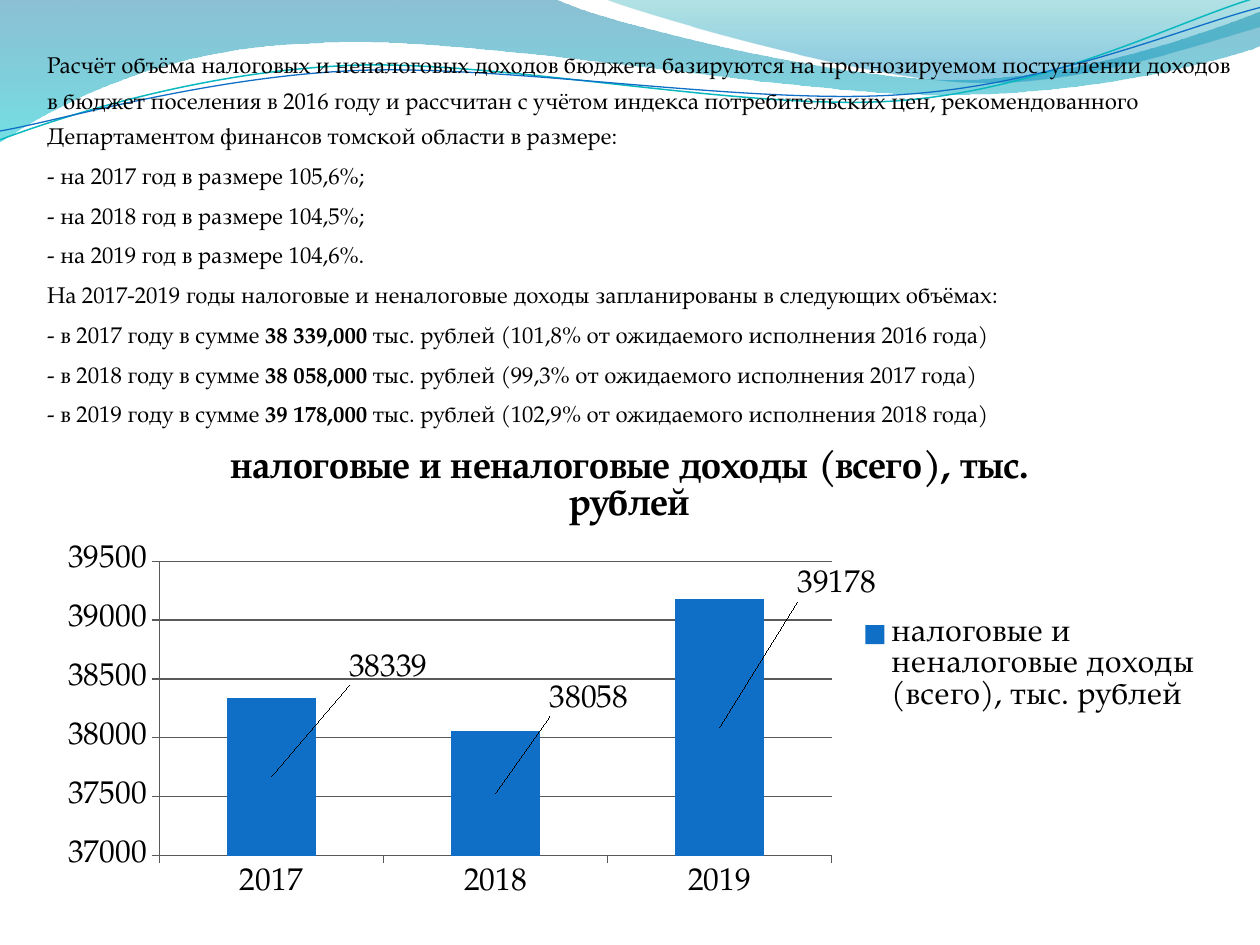
from lxml import etree
from pptx import Presentation
from pptx import util as u
from pptx.chart.data import CategoryChartData
from pptx.dml.color import RGBColor
from pptx.enum import chart as ch
from pptx.enum import text as t
from pptx.oxml import parse_xml
from pptx.oxml.ns import nsdecls, qn

BLACK = RGBColor(0x00, 0x00, 0x00)
GREY = RGBColor(0x59, 0x59, 0x59)
BLUE = RGBColor(0x0F, 0x6F, 0xC6)
TEAL = RGBColor(0x0A, 0xB8, 0xBF)
DEEP = RGBColor(0x00, 0x74, 0xA1)
AQUA = RGBColor(0x00, 0xC6, 0xCF)
SEA = RGBColor(0x00, 0xA1, 0xA9)
SKY = RGBColor(0x00, 0x8B, 0xBF)
FONT = "TeX Gyre Pagella"
NAME = "налоговые и неналоговые доходы (всего), тыс. рублей"
C15 = "http://schemas.microsoft.com/office/drawing/2012/chart"

LEFT = [(0, 0), (440, -1), (476, 17, 664, 63, 758, 63),
        (853, 63, 958, 26, 1000, 9), (1001, 36),
        (983, 44, 870, 76, 746, 75), (622, 75, 382, 28, 257, 34),
        (129, 36, 46, 83, -1, 113)]
RIGHT = [(479, -1), (509, 11, 682, 62, 769, 65),
         (856, 69, 961, 32, 1000, 21), (1000, 0)]
HIGH = [(0, 111), (48, 93, 158, 57, 277, 52),
        (395, 47, 593, 89, 713, 80), (833, 71, 938, 15, 998, -2)]
LOW = [(0, 104), (47, 96, 164, 61, 283, 56),
       (403, 51, 597, 84, 717, 75), (836, 67, 941, 21, 1000, 6)]

LINES = [
    ["Расчёт объёма налоговых и неналоговых доходов бюджета базируются на "
     "прогнозируемом поступлении доходов в бюджет поселения в 2016 году и "
     "рассчитан с учётом индекса потребительских цен, рекомендованного "
     "Департаментом финансов томской области в размере:"],
    ["- на 2017 год в размере 105,6%;"],
    ["- на 2018 год в размере 104,5%;"],
    ["- на 2019 год в размере 104,6%."],
    ["На 2017-2019 годы налоговые и неналоговые доходы запланированы "
     "в следующих объёмах:"],
    ["- в 2017 году в сумме ", "38 339,000 ",
     "тыс. рублей (101,8% от ожидаемого исполнения 2016 года)"],
    ["- в 2018 году в сумме ", "38 058,000 ",
     "тыс. рублей (99,3% от ожидаемого исполнения 2017 года)"],
    ["- в 2019 году в сумме ", "39 178,000 ",
     "тыс. рублей (102,9% от ожидаемого исполнения 2018 года)"],
]


def curve(slide, box, path, close):
    x, y, w, h = box
    pts = [(int(x + a * w / 1000), int(y + b * w / 1000))
           for seg in path for a, b in zip(seg[::2], seg[1::2])]
    pen = slide.shapes.build_freeform(*pts[0])
    pen.add_line_segments(pts[1:], close=close)
    shape = pen.convert_to_shape()
    shape.shadow.inherit = False
    shape.fill.background()
    steps = iter(list(shape.element.iter(qn("a:lnTo"))))
    for seg in path[1:]:
        first = next(steps)
        if len(seg) == 6:
            bend = etree.Element(qn("a:cubicBezTo"))
            first.addprevious(bend)
            for step in (first, next(steps), next(steps)):
                bend.append(step[0])
                step.getparent().remove(step)
    return shape


def fade(shape, stops):
    marks = "".join(
        f'<a:gs pos="{pos * 1000}"><a:srgbClr val="{color}">'
        f'<a:alpha val="{alpha * 1000}"/></a:srgbClr></a:gs>'
        for pos, color, alpha in stops)
    grad = parse_xml(f'<a:gradFill {nsdecls("a")} rotWithShape="1"><a:gsLst>{marks}'
                     '</a:gsLst><a:lin ang="5400000" scaled="1"/></a:gradFill>')
    old = shape.element.spPr.find(qn("a:noFill"))
    old.getparent().replace(old, grad)


def waves(slide, box):
    for path, stops in ((LEFT, [(0, DEEP, 45), (100, AQUA, 55)]),
                        (RIGHT, [(0, SEA, 30), (80, SKY, 45)])):
        shape = curve(slide, box, path, True)
        shape.line.fill.background()
        fade(shape, stops)
    for path, color, width in ((HIGH, TEAL, 0.85), (LOW, BLUE, 0.75)):
        line = curve(slide, box, path, False).line
        line.color.rgb = color
        line.width = u.Pt(width)


def style(font, size, bold=False):
    font.name, font.size, font.bold = FONT, u.Pt(size), bold
    font.color.rgb = BLACK


def notes(slide, body, box):
    slide.shapes.element.append(body.element)
    body.left, body.top, body.width, body.height = box
    frame = body.text_frame
    frame.word_wrap = True
    frame.auto_size = t.MSO_AUTO_SIZE.NONE
    frame.vertical_anchor = t.MSO_ANCHOR.TOP
    frame.margin_left = frame.margin_right = u.Cm(0.05)
    frame.margin_top = frame.margin_bottom = u.Cm(0.12)
    for i, parts in enumerate(LINES):
        para = frame.add_paragraph() if i else frame.paragraphs[0]
        para.line_spacing = 1.3
        para.space_before = u.Pt(2.4)
        props = para._p.get_or_add_pPr()
        props.set("marL", "0")
        props.set("indent", "0")
        etree.SubElement(props, qn("a:buNone"))
        for j, part in enumerate(parts):
            run = para.add_run()
            run.text = part
            style(run.font, 13, j == 1)


def place(labels, shifts):
    for label, (dx, dy) in zip(labels.iter(qn("c:dLbl")), shifts):
        label.insert(1, parse_xml(
            f'<c:layout {nsdecls("c")}><c:manualLayout><c:x val="{dx}"/>'
            f'<c:y val="{dy}"/></c:manualLayout></c:layout>'))
    for lead in labels.findall(qn("c:showLeaderLines")):
        labels.remove(lead)
    labels.append(parse_xml(
        f'<c:extLst {nsdecls("c")}><c:ext xmlns:c15="{C15}" '
        'uri="{CE6537A1-D6FC-4f65-9D91-7224C49458BB}">'
        '<c15:showLeaderLines val="0"/></c:ext></c:extLst>'))


def graph(slide, box):
    data = CategoryChartData()
    data.categories = ["2017", "2018", "2019"]
    data.add_series(NAME, [38339, 38058, 39178])
    kind = ch.XL_CHART_TYPE.COLUMN_STACKED
    chart = slide.shapes.add_chart(kind, *box, data).chart
    style(chart.font, 18)
    chart.has_title = True
    title = chart.chart_title.text_frame
    title.text = NAME
    style(title.paragraphs[0].runs[0].font, 21.6, True)
    chart.has_legend = True
    chart.legend.position = ch.XL_LEGEND_POSITION.RIGHT
    chart.legend.include_in_layout = False

    axis = chart.value_axis
    axis.minimum_scale, axis.maximum_scale, axis.major_unit = 37000, 39500, 500
    for line in (axis.format.line, axis.major_gridlines.format.line,
                 chart.category_axis.format.line):
        line.color.rgb = GREY
        line.width = u.Pt(0.75)
    for side in (axis, chart.category_axis):
        side.major_tick_mark = ch.XL_TICK_MARK.OUTSIDE

    plot = chart.plots[0]
    plot.gap_width, plot.overlap = 150, 100
    plot.vary_by_categories = False
    bars = plot.series[0]
    bars.format.fill.solid()
    bars.format.fill.fore_color.rgb = BLUE
    bars.data_labels.show_value = True
    shifts = [(0.1, -0.22), (0.08, -0.19), (0.1, -0.29)]
    for i in range(len(shifts)):
        bars.points[i].data_label.position = ch.XL_LABEL_POSITION.CENTER
    place(bars.data_labels._element, shifts)


def main():
    deck = Presentation()
    deck.slide_width, deck.slide_height = u.Cm(25.4), u.Cm(19.05)
    slide = deck.slides.add_slide(deck.slide_layouts[1])
    head = slide.shapes.title.element
    head.getparent().remove(head)
    waves(slide, (0, 0, deck.slide_width, u.Cm(2.9)))
    notes(slide, slide.placeholders[1],
          (u.Cm(0.9), u.Cm(0.74), u.Cm(24), u.Cm(8.61)))
    graph(slide, (u.Cm(0.9), u.Cm(8.53), u.Cm(23.6), u.Cm(9.8)))
    deck.save("out.pptx")


if __name__ == "__main__":
    main()
